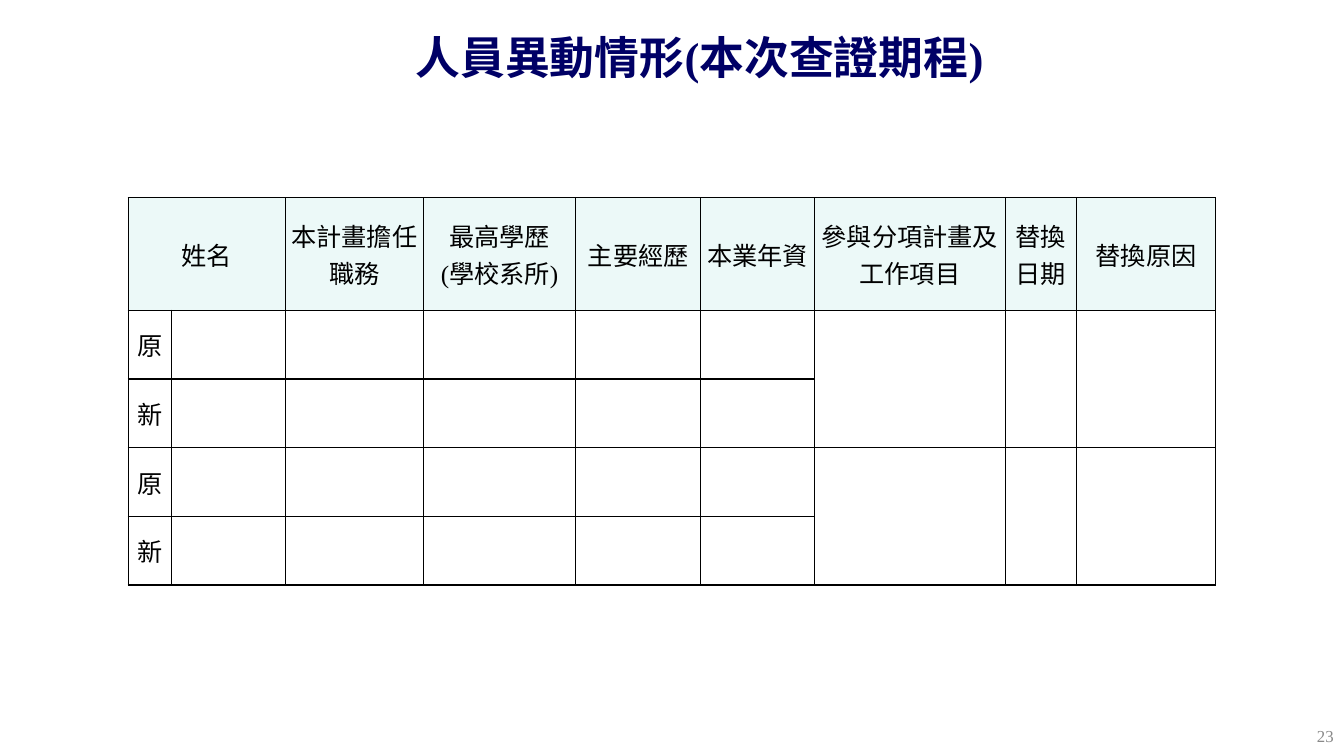
from dataclasses import dataclass

from lxml.etree import SubElement
from pptx import Presentation
from pptx.dml.color import RGBColor
from pptx.enum.text import MSO_ANCHOR, PP_ALIGN
from pptx.oxml import parse_xml
from pptx.oxml.ns import nsdecls, qn
from pptx.util import Cm, Pt


@dataclass(frozen=True)
class Theme:
    latin: str = "Times New Roman"
    cjk: str = "Noto Sans CJK SC"
    navy: str = "000066"
    grey: str = "898989"
    black: str = "000000"
    white: str = "FFFFFF"
    mint: str = "ECF9F8"
    title_size: int = 32
    table_size: int = 18
    number_size: int = 12
    border_width: int = 1


THEME = Theme()
HEADINGS = ["姓名", None, "本計畫擔任職務", "最高學歷\n(學校系所)", "主要經歷",
            "本業年資", "參與分項計畫及工作項目", "替換日期", "替換原因"]
ROW_LABELS = ["原", "新"] * 2
COLUMN_WIDTHS = [1.09, 2.87, 3.48, 3.84, 3.15, 2.87, 4.8, 1.8, 3.51]
HEADING_HEIGHT, STAFF_HEIGHT = 2.84, 1.73
SHARED_COLUMNS = (6, 7, 8)  # one cell for each pair of old and new staff


def write(frame, text, size, color, align, font=THEME.latin, bold=False):
    """Fill a text frame, one paragraph for each line."""
    frame.text = text
    frame.word_wrap = True
    for para in frame.paragraphs:
        para.alignment = align
        for span in para.runs:
            span.font.color.rgb = RGBColor.from_string(color)
            formats = {"size": Pt(size), "bold": bold, "name": font}
            for name, value in formats.items():
                setattr(span.font, name, value)
            properties = span.font._element
            SubElement(properties, qn("a:ea"), typeface=THEME.cjk)


def add_label(page, box, text, **formats):
    """Text box centred vertically in the given box."""
    frame = page.shapes.add_textbox(*map(Cm, box)).text_frame
    write(frame, text, **formats)
    frame.vertical_anchor = MSO_ANCHOR.MIDDLE


def style_cell(cell, fill):
    """Fill, margins and a thin border on all four sides."""
    formats = {"vertical_anchor": MSO_ANCHOR.MIDDLE,
               "margin_left": Cm(0.05), "margin_right": Cm(0.05),
               "margin_top": 0, "margin_bottom": 0}
    for name, value in formats.items():
        setattr(cell, name, value)
    cell.fill.solid()
    cell.fill.fore_color.rgb = RGBColor.from_string(fill)
    properties = cell._tc.get_or_add_tcPr()
    for index, side in enumerate(("lnL", "lnR", "lnT", "lnB")):
        properties.insert(index, parse_xml(
            f'<a:{side} {nsdecls("a")} w="{Pt(THEME.border_width)}"><a:solidFill>'
            f'<a:srgbClr val="{THEME.black}"/></a:solidFill></a:{side}>'))


def add_staff_table(page, left, top):
    """Staff changes: a heading row, then pairs of old and new rows."""
    heights = [HEADING_HEIGHT] + [STAFF_HEIGHT] * len(ROW_LABELS)
    table = page.shapes.add_table(
        len(heights), len(COLUMN_WIDTHS), Cm(left), Cm(top),
        Cm(sum(COLUMN_WIDTHS)), Cm(sum(heights))).table
    for column, width in zip(table.columns, COLUMN_WIDTHS):
        column.width = Cm(width)
    for row, height in zip(table.rows, heights):
        row.height = Cm(height)

    # Cell looks and wording
    blanks = [None] * (len(COLUMN_WIDTHS) - 1)
    contents = [HEADINGS] + [[label] + blanks for label in ROW_LABELS]
    for row_index, texts in enumerate(contents):
        for column_index, text in enumerate(texts):
            cell = table.cell(row_index, column_index)
            style_cell(cell, THEME.white if row_index else THEME.mint)
            if text:
                write(cell.text_frame, text, THEME.table_size, THEME.black,
                      PP_ALIGN.CENTER, THEME.latin if "(" in text else THEME.cjk)

    # Joined cells
    table.cell(0, 0).merge(table.cell(0, 1))
    for first_row in range(1, len(heights), 2):
        for column_index in SHARED_COLUMNS:
            table.cell(first_row, column_index).merge(
                table.cell(first_row + 1, column_index))


def add_staff_page(deck):
    page = deck.slides.add_slide(deck.slide_layouts[6])
    # Title
    add_label(page, (6.2, 0.43, 22.86, 2.01), "人員異動情形(本次查證期程)",
              size=THEME.title_size, color=THEME.navy,
              align=PP_ALIGN.CENTER, bold=True)
    # Table
    add_staff_table(page, 3.23, 4.98)
    # Page number
    add_label(page, (25.96, 18.03, 7.9, 1.02), "23", size=THEME.number_size,
              color=THEME.grey, align=PP_ALIGN.RIGHT)


def main():
    deck = Presentation()
    deck.slide_width, deck.slide_height = Cm(33.87), Cm(19.05)
    add_staff_page(deck)
    deck.save("out.pptx")


if __name__ == "__main__":
    main()
